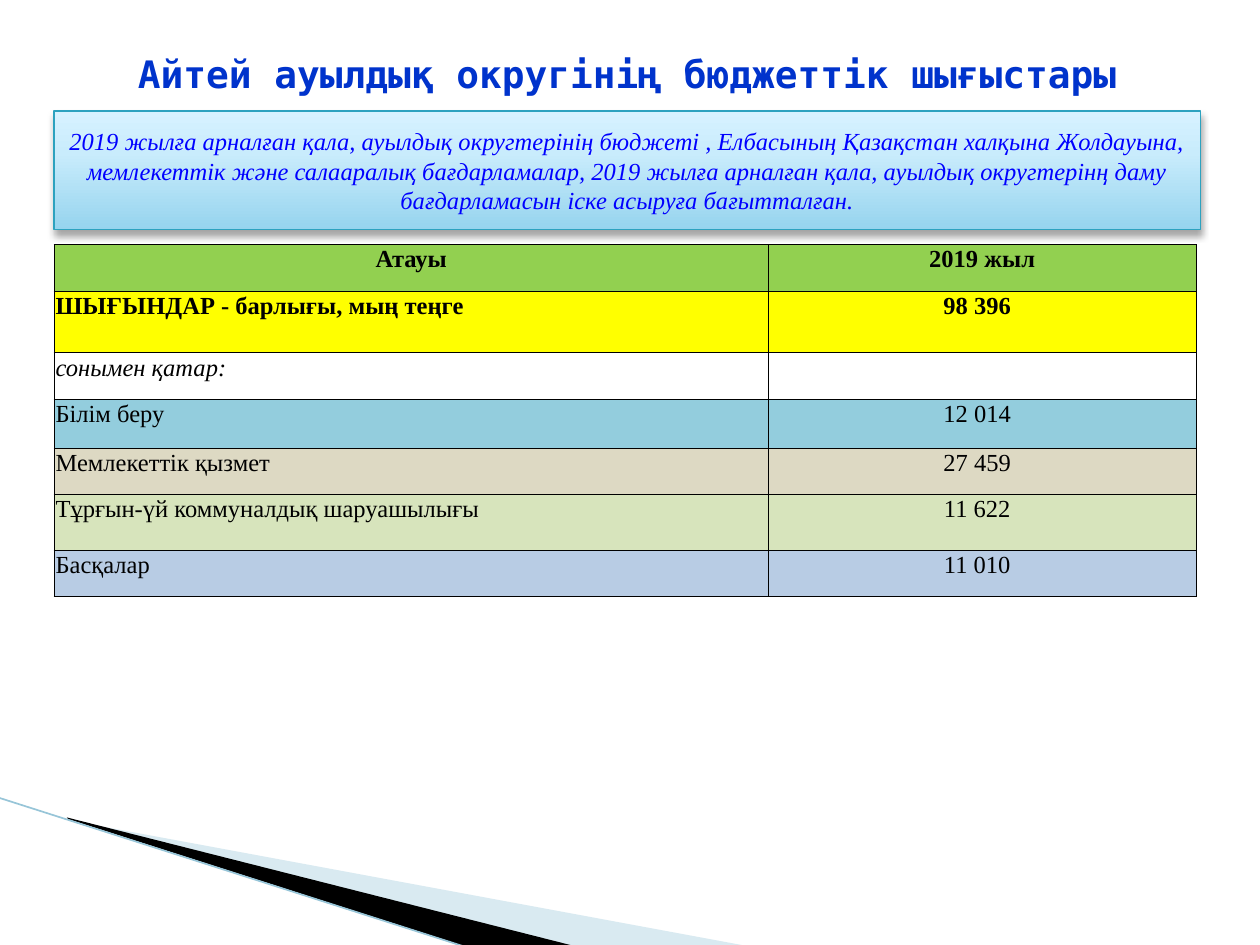
from dataclasses import dataclass

from lxml.etree import SubElement
from pptx import Presentation
from pptx.dml.color import RGBColor
from pptx.enum.shapes import MSO_CONNECTOR, MSO_SHAPE
from pptx.enum.text import MSO_ANCHOR, PP_ALIGN
from pptx.oxml import parse_xml
from pptx.oxml.ns import nsdecls, qn
from pptx.util import Cm, Pt


@dataclass(frozen=True)
class Theme:
    title_font: str = "DejaVu Sans Mono"
    body_font: str = "Times New Roman"
    title_size: float = 21.6
    body_size: float = 14
    title: str = "0033CC"
    notice: str = "0000FF"
    notice_line: str = "2DA2BF"
    notice_stops: tuple = ((0, "96D4EE"), (65, "C9ECFC"), (100, "D7F2FF"))
    ink: str = "000000"
    pale_wedge: str = "A0CBDC"
    wedge_line: str = "97C5D8"
    header: str = "92D050"
    total: str = "FFFF00"
    education: str = "93CDDD"
    services: str = "DDD9C3"
    housing: str = "D7E4BC"
    other: str = "B8CCE4"


theme = Theme()


def add_text(frame, text, font, size, color, align=PP_ALIGN.CENTER, bold=False, italic=False):
    paragraph = frame.paragraphs[0]
    paragraph.alignment = align
    run = paragraph.add_run()
    run.text = text
    run.font.name = font
    run.font.size = Pt(size)
    run.font.bold = bold
    run.font.italic = italic
    run.font.color.rgb = RGBColor.from_string(color)


def add_borders(cell):
    properties = cell._tc.get_or_add_tcPr()
    for position, side in enumerate(("lnL", "lnR", "lnT", "lnB")):
        properties.insert(position, parse_xml(
            f'<a:{side} {nsdecls("a")} w="{Pt(0.5)}"><a:solidFill>'
            f'<a:srgbClr val="{theme.ink}"/></a:solidFill></a:{side}>'
        ))


presentation = Presentation()
presentation.slide_width = Cm(25.4)
presentation.slide_height = Cm(19.05)
slide = presentation.slides.add_slide(presentation.slide_layouts[6])

wedges = (
    (((1.4, 16.54), (15.11, 19.08), (11.58, 19.08), (1.4, 16.51)), theme.pale_wedge, 40),
    (((1.35, 16.48), (11.61, 19.08), (9.45, 19.1), (1.37, 16.51)), theme.ink, 100),
)
for points, color, opacity in wedges:
    corners = [(Cm(x), Cm(y)) for x, y in points]
    builder = slide.shapes.build_freeform(*corners[0], scale=1.0)
    builder.add_line_segments(corners[1:], close=True)
    wedge = builder.convert_to_shape()
    wedge.shadow.inherit = False
    wedge.fill.solid()
    wedge.fill.fore_color.rgb = RGBColor.from_string(color)
    wedge.line.fill.background()
    if opacity < 100:
        color_element = wedge._element.spPr.find(qn("a:solidFill"))[0]
        SubElement(color_element, qn("a:alpha"), val=str(opacity * 1000))

edge = slide.shapes.add_connector(MSO_CONNECTOR.STRAIGHT, Cm(-0.03), Cm(16.08), Cm(9.42), Cm(19.1))
edge.line.color.rgb = RGBColor.from_string(theme.wedge_line)
edge.line.width = Pt(0.95)
SubElement(edge._element.spPr, qn("a:effectLst"))

title = slide.shapes.add_textbox(Cm(1.09), Cm(0.95), Cm(23.11), Cm(1.07))
title.text_frame.word_wrap = True
title.text_frame.vertical_anchor = MSO_ANCHOR.MIDDLE
add_text(title.text_frame, "Айтей ауылдық округінің бюджеттік шығыстары",
         theme.title_font, theme.title_size, theme.title, bold=True)

rows = (
    ("Атауы", "2019 жыл", theme.header, 0.94),
    ("ШЫҒЫНДАР - барлығы, мың теңге", "98 396", theme.total, 1.24),
    ("сонымен қатар:", "", None, 0.94),
    ("Білім беру", "12 014", theme.education, 0.98),
    ("Мемлекеттік қызмет", "27 459", theme.services, 0.94),
    ("Тұрғын-үй коммуналдық шаруашылығы", "11 622", theme.housing, 1.12),
    ("Басқалар", "11 010", theme.other, 0.94),
)
column_widths = (14.4, 8.62)
total_height = sum(row[-1] for row in rows)
table = slide.shapes.add_table(len(rows), len(column_widths), Cm(1.09), Cm(4.93),
                               Cm(sum(column_widths)), Cm(total_height)).table
table.first_row = False
table.horz_banding = False
for column, width in zip(table.columns, column_widths):
    column.width = Cm(width)

for row_index, (label, amount, color, height) in enumerate(rows):
    table.rows[row_index].height = Cm(height)
    for column_index, text in enumerate((label, amount)):
        cell = table.cell(row_index, column_index)
        is_amount = column_index == 1 and row_index > 0
        cell.margin_left = cell.margin_top = Cm(0.03)
        cell.margin_right = Cm(0.23 if is_amount else 0.03)
        cell.margin_bottom = Cm(0)
        if color:
            cell.fill.solid()
            cell.fill.fore_color.rgb = RGBColor.from_string(color)
        else:
            cell.fill.background()
        add_borders(cell)
        if text:
            centred = row_index == 0 or column_index == 1
            add_text(cell.text_frame, text, theme.body_font, theme.body_size, theme.ink,
                     PP_ALIGN.CENTER if centred else PP_ALIGN.LEFT,
                     bold=row_index < 2, italic=color is None)

notice = slide.shapes.add_shape(MSO_SHAPE.RECTANGLE, Cm(1.09), Cm(2.24), Cm(23.11), Cm(2.39))
notice.line.color.rgb = RGBColor.from_string(theme.notice_line)
notice.line.width = Pt(0.75)
stops = "".join(f'<a:gs pos="{position * 1000}"><a:srgbClr val="{color}"/></a:gs>'
                for position, color in theme.notice_stops)
notice_properties = notice._element.spPr
notice_properties.find(qn("a:prstGeom")).addnext(parse_xml(
    f'<a:gradFill {nsdecls("a")} rotWithShape="1"><a:gsLst>{stops}</a:gsLst>'
    '<a:lin ang="16200000" scaled="0"/></a:gradFill>'
))
notice_properties.append(parse_xml(
    f'<a:effectLst {nsdecls("a")}><a:outerShdw blurRad="{Pt(4)}" dist="{Pt(3)}" dir="5400000" '
    f'rotWithShape="0"><a:srgbClr val="{theme.ink}"><a:alpha val="35000"/></a:srgbClr>'
    '</a:outerShdw></a:effectLst>'
))
notice.text_frame.word_wrap = True
notice.text_frame.vertical_anchor = MSO_ANCHOR.MIDDLE
add_text(
    notice.text_frame,
    "2019 жылға арналған қала, ауылдық округтерінің бюджеті , Елбасының Қазақстан халқына "
    "Жолдауына, мемлекеттік және салааралық бағдарламалар, 2019 жылға арналған қала, ауылдық "
    "округтерінң даму бағдарламасын іске асыруға бағытталған.",
    theme.body_font, theme.body_size, theme.notice, italic=True,
)

presentation.save("out.pptx")
